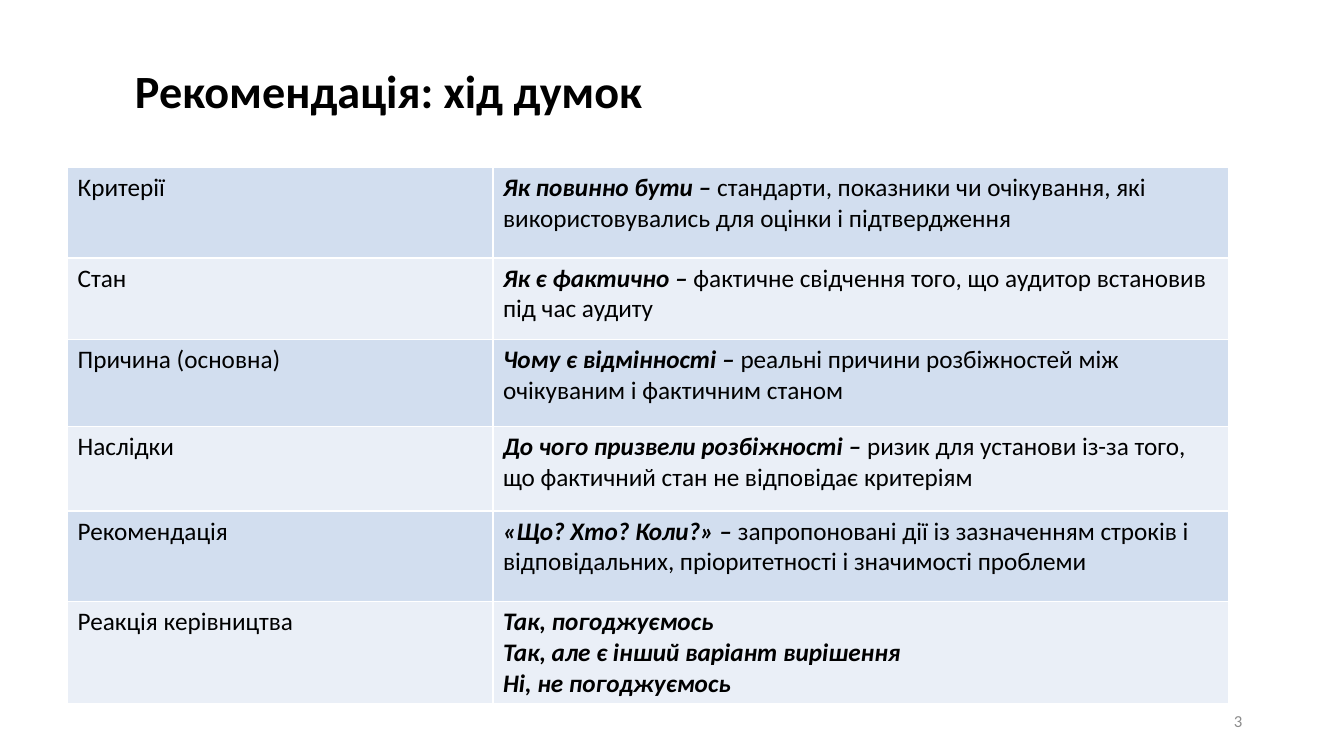
from dataclasses import dataclass

import pptx
import pptx.dml.color
import pptx.enum.text
import pptx.oxml
import pptx.oxml.ns
import pptx.util

Inches = pptx.util.Inches
RGB = pptx.dml.color.RGBColor.from_string
ALIGN = pptx.enum.text.PP_ALIGN


@dataclass(frozen=True)
class Theme:
    font: str = "Calibri"
    text: str = "000000"
    muted: str = "8C8C8C"
    bands: tuple[str, str] = ("D2DEEF", "EAEFF7")
    border: str = "FFFFFF"
    border_pt: float = 1
    title_pt: float = 33
    body_pt: float = 18
    number_pt: float = 12


@dataclass(frozen=True)
class Label:
    text: str
    box: tuple[float, float, float, float]
    size: float
    color: str
    bold: bool = False
    align: ALIGN = ALIGN.LEFT
    spacing: float = 1.0


@dataclass(frozen=True)
class Step:
    name: str
    height: float
    leads: tuple[str, ...]  # bold italic, one per paragraph
    detail: str = ""        # plain text after the last lead


THEME = Theme()

LABELS = [
    Label("Рекомендація: хід думок", (1.24, 0.4, 11.17, 1.06), THEME.title_pt,
          THEME.text, bold=True, spacing=0.9),
    Label("3", (9.42, 6.95, 3, 0.4), THEME.number_pt, THEME.muted,
          align=ALIGN.RIGHT),
]

STEPS = [
    Step("Критерії", 0.9, ("Як повинно бути – ",),
         "стандарти, показники чи очікування, які використовувались "
         "для оцінки і підтвердження"),
    Step("Стан", 0.81, ("Як є фактично – ",),
         "фактичне свідчення того, що аудитор встановив під час аудиту"),
    Step("Причина (основна)", 0.86, ("Чому є відмінності – ",),
         "реальні причини розбіжностей між очікуваним і фактичним станом"),
    Step("Наслідки", 0.84, ("До чого призвели розбіжності – ",),
         "ризик для установи із-за того, що фактичний стан "
         "не відповідає критеріям"),
    Step("Рекомендація", 0.9, ("«Що? Хто? Коли?» – ",),
         "запропоновані дії із зазначенням строків і відповідальних, "
         "пріоритетності і значимості проблеми"),
    Step("Реакція керівництва", 1.01,
         ("Так, погоджуємось", "Так, але є інший варіант вирішення",
          "Ні, не погоджуємось")),
]
TABLE_LEFT, TABLE_TOP = 0.67, 1.66
COLUMNS = (4.22, 7.3)


def set_font(font, size: float, color: str) -> None:
    font.name = THEME.font
    font.size = pptx.util.Pt(size)
    font.color.rgb = RGB(color)


def add_label(slide, label: Label) -> None:
    sp = slide.shapes.add_textbox(*map(Inches, label.box))
    tf = sp.text_frame
    tf.word_wrap = True
    tf.vertical_anchor = pptx.enum.text.MSO_ANCHOR.MIDDLE
    p = tf.paragraphs[0]
    p.text = label.text
    p.alignment = label.align
    p.line_spacing = label.spacing
    set_font(p.font, label.size, label.color)
    p.font.bold = label.bold


def style_cell(cell, fill: str) -> None:
    # Borders come before the fill in the cell properties
    tc_pr = cell._tc.get_or_add_tcPr()
    width = pptx.util.Pt(THEME.border_pt)
    for side in "LRTB":
        tc_pr.append(pptx.oxml.parse_xml(
            f'<a:ln{side} {pptx.oxml.ns.nsdecls("a")} w="{width}"><a:solidFill>'
            f'<a:srgbClr val="{THEME.border}"/></a:solidFill></a:ln{side}>'))
    cell.fill.solid()
    cell.fill.fore_color.rgb = RGB(fill)
    for p in cell.text_frame.paragraphs:
        set_font(p.font, THEME.body_pt, THEME.text)


def fill_answer(tf, step: Step) -> None:
    for i, lead in enumerate(step.leads):
        p = tf.add_paragraph() if i else tf.paragraphs[0]
        r = p.add_run()
        r.text = lead
        r.font.bold = r.font.italic = True
    if step.detail:
        p.add_run().text = step.detail


def add_steps(slide, steps: list[Step]) -> None:
    height = sum(step.height for step in steps)
    table = slide.shapes.add_table(
        len(steps), len(COLUMNS), Inches(TABLE_LEFT), Inches(TABLE_TOP),
        Inches(sum(COLUMNS)), Inches(height)).table
    table.first_row = False
    for column, width in zip(table.columns, COLUMNS):
        column.width = Inches(width)
    for i, step in enumerate(steps):
        table.rows[i].height = Inches(step.height)
        name, answer = table.cell(i, 0), table.cell(i, 1)
        name.text_frame.text = step.name
        fill_answer(answer.text_frame, step)
        for cell in (name, answer):
            style_cell(cell, THEME.bands[i % 2])


def main() -> None:
    prs = pptx.Presentation()
    prs.slide_width, prs.slide_height = Inches(13.33), Inches(7.5)
    slide = prs.slides.add_slide(prs.slide_layouts[6])

    # Title and slide number
    for label in LABELS:
        add_label(slide, label)

    # Table of reasoning steps
    add_steps(slide, STEPS)

    prs.save("out.pptx")


if __name__ == "__main__":
    main()
